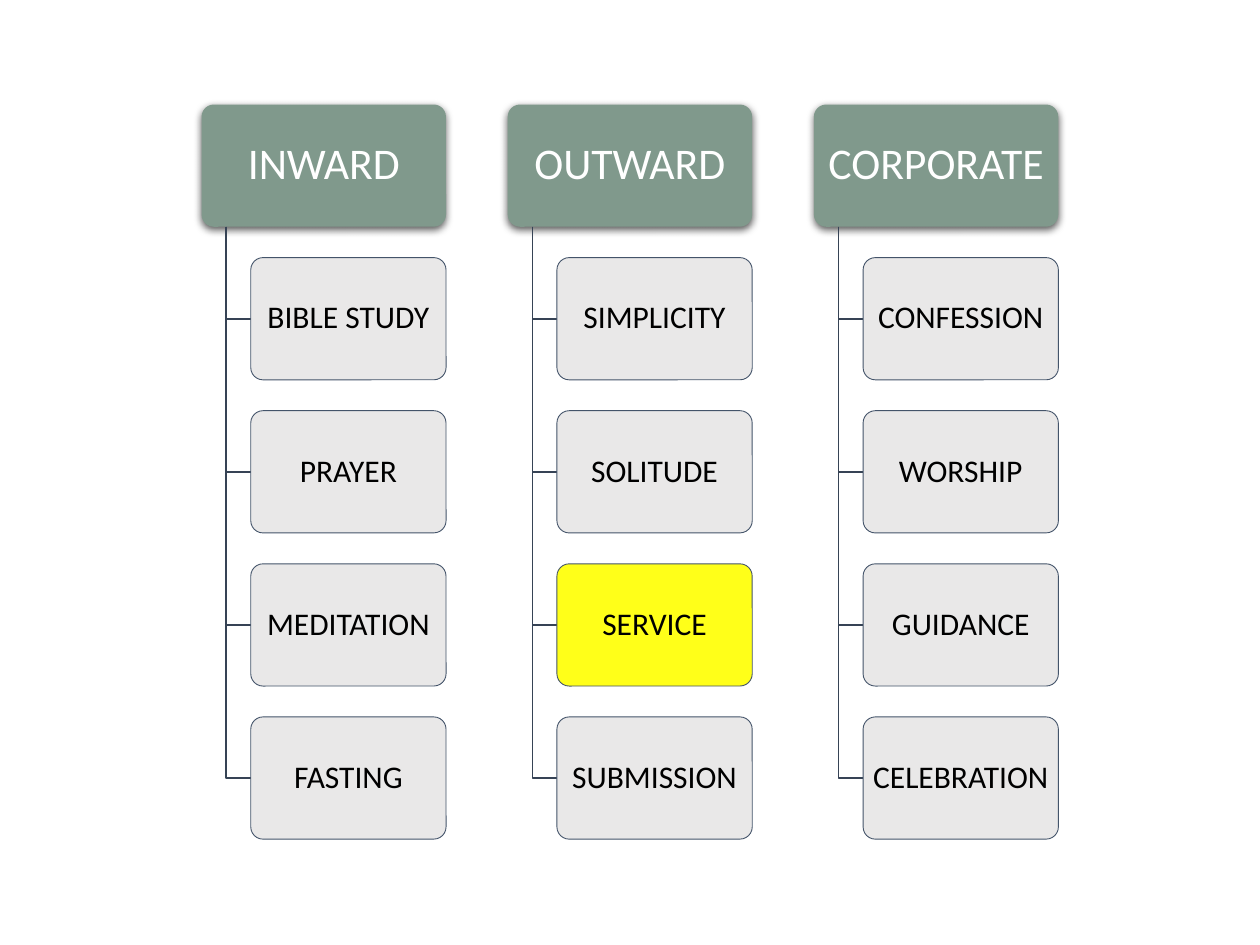
from lxml import etree
from pptx import Presentation
from pptx import util as u
from pptx.dml.color import RGBColor
from pptx.enum import shapes, text
from pptx.oxml import ns

COLORS = {
    "heading": "80998C",
    "item": "E7E6E6",
    "highlight": "FFFF00",
    "outline": "44546A",
    "branch": "364355",
    "light": "FFFFFF",
    "dark": "000000",
}
COLUMNS = {
    "INWARD": ["BIBLE STUDY", "PRAYER", "MEDITATION", "FASTING"],
    "OUTWARD": ["SIMPLICITY", "SOLITUDE", "SERVICE", "SUBMISSION"],
    "CORPORATE": ["CONFESSION", "WORSHIP", "GUIDANCE", "CELEBRATION"],
}
HIGHLIGHTED = "SERVICE"

LEFT, TOP = 1.6, 0.83
WIDTH, HEIGHT = 1.94, 0.97
COLUMN_PITCH = 2.43
ROW_PITCH = COLUMN_PITCH / 2
INDENT = 0.39


class Chart:
    """Style and current page of the three-branch hierarchy."""

    font = "Calibri"

    def __init__(self, page):
        self.page = page

    def color(self, name):
        return RGBColor.from_string(COLORS[name])

    def box(self, label, left, top, width, fill, ink, size, inset):
        box = self.page.shapes.add_shape(
            shapes.MSO_SHAPE.ROUNDED_RECTANGLE,
            u.Inches(left), u.Inches(top), u.Inches(width), u.Inches(HEIGHT))
        box.adjustments[0] = 0.1
        box.shadow.inherit = False
        box.fill.solid()
        box.fill.fore_color.rgb = self.color(fill)

        frame = box.text_frame
        frame.text = label
        frame.word_wrap = True
        frame.vertical_anchor = text.MSO_ANCHOR.MIDDLE
        frame.margin_left = frame.margin_right = u.Inches(inset)
        frame.margin_top = frame.margin_bottom = u.Inches(0.03)
        para = frame.paragraphs[0]
        para.alignment = text.PP_ALIGN.CENTER
        para.line_spacing = 0.9
        font = para.runs[0].font
        font.name, font.size = self.font, u.Pt(size)
        font.color.rgb = self.color(ink)
        return box

    def heading(self, label, left):
        box = self.box(label, left, TOP, WIDTH, "heading", "light", 25, 0.05)
        box.line.fill.background()
        effects = box._element.spPr.find(ns.qn("a:effectLst"))
        shadow = etree.SubElement(
            effects, ns.qn("a:outerShdw"), blurRad=str(u.Pt(4.5)),
            dist=str(u.Pt(1.5)), dir="5400000", algn="ctr", rotWithShape="0")
        tint = etree.SubElement(shadow, ns.qn("a:srgbClr"), val=COLORS["dark"])
        etree.SubElement(tint, ns.qn("a:alpha"), val="63000")

    def item(self, label, left, top):
        fill = "highlight" if label == HIGHLIGHTED else "item"
        box = self.box(label, left + INDENT, top, WIDTH - INDENT,
                       fill, "dark", 18, 0.04)
        tint = box._element.spPr.find(ns.qn("a:solidFill"))[0]
        etree.SubElement(tint, ns.qn("a:alpha"), val="90000")
        box.line.color.rgb = self.color("outline")
        box.line.width = u.Pt(0.5)

    def branch(self, left, top):
        """Draw the elbow from the heading's foot to the item at top."""
        trunk, end = u.Inches(left + INDENT / 2), u.Inches(left + INDENT)
        middle = u.Inches(top + HEIGHT / 2)
        builder = self.page.shapes.build_freeform(trunk, u.Inches(TOP + HEIGHT))
        builder.add_line_segments([(trunk, middle), (end, middle)], close=False)
        elbow = builder.convert_to_shape()
        elbow.shadow.inherit = False
        elbow.fill.background()
        elbow.line.color.rgb = self.color("branch")
        elbow.line.width = u.Pt(1)


def main():
    deck = Presentation()
    deck.slide_width, deck.slide_height = u.Inches(10), u.Inches(7.5)
    blank = deck.slide_layouts[6]
    chart = Chart(deck.slides.add_slide(blank))
    for column, (heading, items) in enumerate(COLUMNS.items()):
        left = LEFT + column * COLUMN_PITCH
        chart.heading(heading, left)
        for row, label in enumerate(items, start=1):
            top = TOP + row * ROW_PITCH
            chart.branch(left, top)
            chart.item(label, left, top)
    deck.save("out.pptx")


if __name__ == "__main__":
    main()
